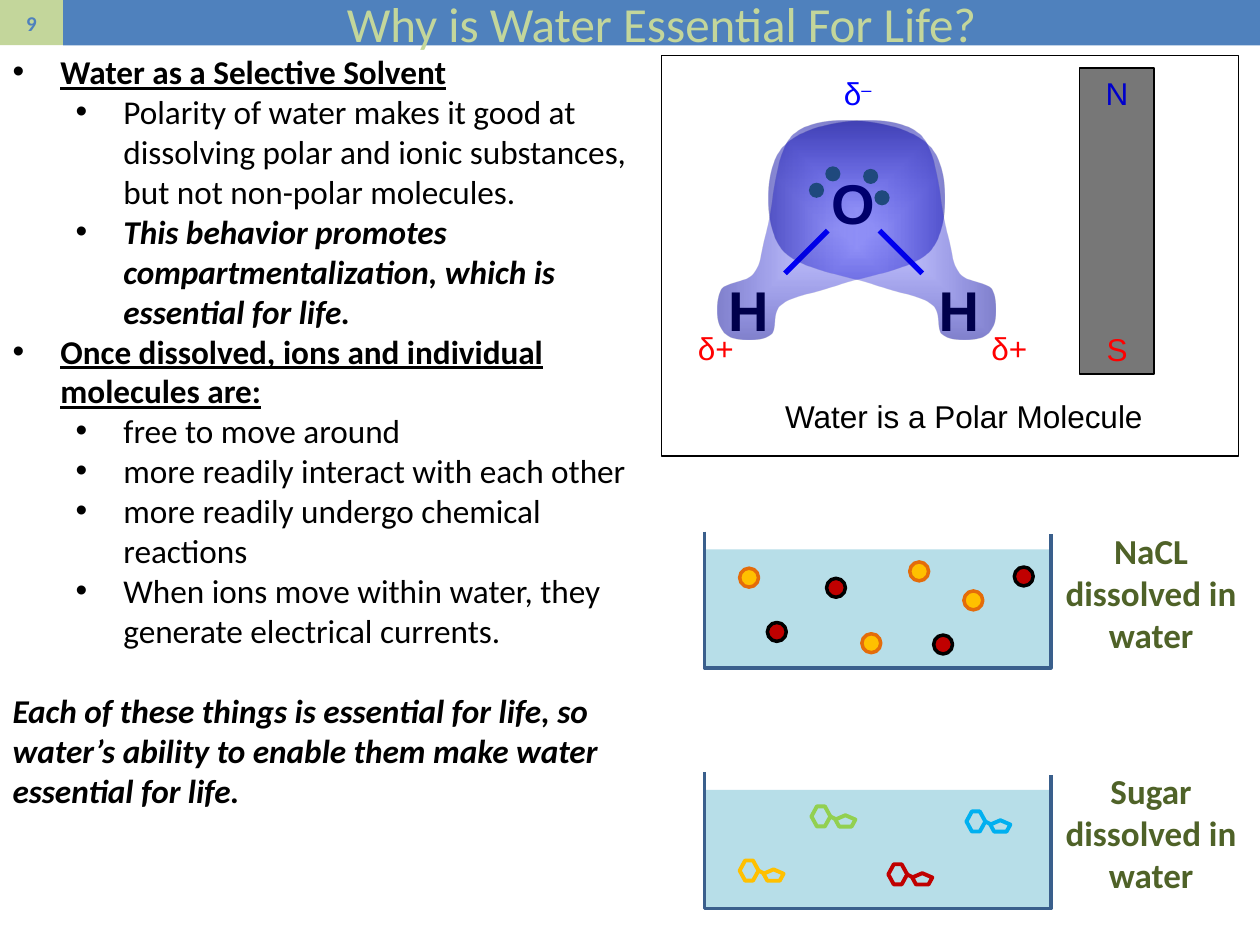
from lxml.etree import SubElement
from pptx import Presentation
from pptx.dml.color import RGBColor
from pptx.enum.shapes import MSO_CONNECTOR, MSO_SHAPE
from pptx.enum.text import MSO_ANCHOR, MSO_AUTO_SIZE, PP_ALIGN
from pptx.oxml import parse_xml
from pptx.oxml.ns import nsdecls, qn
from pptx.util import Inches, Pt

# Content
TITLE, NUMBER = "Why is Water Essential For Life?", "9"
HEAD = {"bold": True, "underline": True}
STRONG = {"bold": True, "italic": True}
BODY = [  # level (None = no bullet), text, format
    (0, "Water as a Selective Solvent", HEAD),
    (1, "Polarity of water makes it good at dissolving polar and ionic substances, "
        "but not non-polar molecules.", {}),
    (1, "This behavior promotes compartmentalization, which is essential for life.", STRONG),
    (0, "Once dissolved, ions and individual molecules are:", HEAD),
    (1, "free to move around", {}),
    (1, "more readily interact with each other", {}),
    (1, "more readily undergo chemical reactions", {}),
    (1, "When ions move within water, they generate electrical currents.", {}),
    (None, "Each of these things is essential for life, so water’s ability to enable "
           "them make water essential for life.", STRONG),
]
ATOMS = [("H", 7.24, 2.14), ("H", 5.57, 2.14), ("O", 6.4, 1.29)]
BONDS = [(6.98, 7.32), (6.57, 6.23)]
ELECTRONS = [(6.42, 1.45), (6.55, 1.32), (6.85, 1.34), (6.94, 1.51)]
CLOUD = [  # start, then two control points and an end point for each curve
    (5.84, 2.68),
    (5.91, 2.7), (6.06, 2.7), (6.12, 2.65), (6.18, 2.61), (6.12, 2.47), (6.21, 2.41),
    (6.3, 2.34), (6.45, 2.33), (6.65, 2.26), (6.85, 2.19), (7.26, 2.14), (7.39, 1.98),
    (7.53, 1.81), (7.52, 1.42), (7.44, 1.26), (7.37, 1.09), (7.14, 1.01), (6.94, 0.98),
    (6.75, 0.95), (6.43, 0.94), (6.29, 1.08), (6.15, 1.22), (6.14, 1.64), (6.09, 1.82),
    (6.04, 1.99), (6.05, 2.08), (5.99, 2.16), (5.94, 2.24), (5.78, 2.23), (5.73, 2.29),
    (5.69, 2.36), (5.69, 2.5), (5.71, 2.56), (5.73, 2.62), (5.77, 2.67), (5.84, 2.68),
]
MIRROR = 13.6  # sum of the x values of mirrored cloud points
TANKS = [("NaCL dissolved in water", 4.22), ("Sugar dissolved in water", 6.13)]
IONS = {
    ("C00000", "000000"): [(6.09, 4.94), (6.56, 4.59), (7.41, 5.04), (8.05, 4.5)],
    ("FFC000", "E46C0A"): [(7.65, 4.69), (5.87, 4.51), (6.84, 5.03), (7.22, 4.46)],
}
SUGARS = [("00B0F0", 7.67, 6.44), ("C00000", 7.05, 6.86),
          ("FFC000", 5.87, 6.83), ("92D050", 6.44, 6.4)]

prs = Presentation()
prs.slide_width, prs.slide_height = Inches(10), Inches(7.5)
s = prs.slides.add_slide(prs.slide_layouts[1])


# Helpers
def rgb(value):
    return RGBColor.from_string(value)


def place(sp, *box):
    for name, value in zip(("left", "top", "width", "height"), box):
        setattr(sp, name, Inches(value))


def paint(sp, fill=None, line=None, width=0.75):
    sp.shadow.inherit = False
    if fill:
        sp.fill.solid()
        sp.fill.fore_color.rgb = rgb(fill)
    else:
        sp.fill.background()
    if line:
        sp.line.color.rgb = rgb(line)
        sp.line.width = Pt(width)
    else:
        sp.line.fill.background()
    return sp


def shape(kind, box, **look):
    return paint(s.shapes.add_shape(kind, *map(Inches, box)), **look)


def write(p, text, size, color, font="Calibri", **extra):
    r = p.add_run()
    r.text = text
    r.font.color.rgb = rgb(color)
    for name, value in {"size": Pt(size), "name": font, **extra}.items():
        setattr(r.font, name, value)
    return r


def label(text, box, size, color, wrap=True, **extra):
    tf = s.shapes.add_textbox(*map(Inches, box)).text_frame
    tf.word_wrap = wrap
    p = tf.paragraphs[0]
    p.alignment = PP_ALIGN.CENTER if wrap else PP_ALIGN.LEFT
    write(p, text, size, color, **extra)
    return p


def line(x1, y1, x2, y2, color, width):
    c = s.shapes.add_connector(MSO_CONNECTOR.STRAIGHT, *map(Inches, (x1, y1, x2, y2)))
    c.line.color.rgb = rgb(color)
    c.line.width = Pt(width)
    SubElement(c._element.spPr, qn("a:effectLst"))


def outline(points, close):
    start, *rest = [(Inches(x), Inches(y)) for x, y in points]
    builder = s.shapes.build_freeform(*start)
    builder.add_line_segments(rest, close=close)
    return builder.convert_to_shape()


def curve(sp):
    """Turn each three line segments into one cubic curve."""
    segments = list(sp._element.spPr.iter(qn("a:lnTo")))
    for first, second, third in zip(*[iter(segments)] * 3):
        first.tag = qn("a:cubicBezTo")
        for segment in (second, third):
            first.append(segment[0])
            segment.getparent().remove(segment)


def cloud(points):
    sp = paint(outline(points, True))
    curve(sp)
    stops = "".join(
        f'<a:gs pos="{pos}"><a:srgbClr val="{color}"><a:alpha val="{alpha}"/></a:srgbClr></a:gs>'
        for pos, color, alpha in ((0, "0000FF", 20000), (100000, "000099", 50000)))
    spPr = sp._element.spPr
    spPr.replace(spPr.find(qn("a:noFill")), parse_xml(
        f'<a:gradFill {nsdecls("a")} rotWithShape="1"><a:gsLst>{stops}</a:gsLst><a:path path="rect">'
        '<a:fillToRect l="50000" t="50000" r="50000" b="50000"/></a:path></a:gradFill>'))


# Header: number box and title
sp = shape(MSO_SHAPE.RECTANGLE, (0, 0, 0.5, 0.36), fill="C3D69B")
title = paint(s.shapes.title, fill="4F81BD")
place(title, 0.5, 0, 9.5, 0.36)
for box, text, size, color, bold in ((sp, NUMBER, 12, "4F81BD", True),
                                     (title, TITLE, 28, "C3D69B", False)):
    tf = box.text_frame
    tf.auto_size, tf.vertical_anchor = MSO_AUTO_SIZE.NONE, MSO_ANCHOR.MIDDLE
    tf.paragraphs[0].alignment = PP_ALIGN.CENTER
    write(tf.paragraphs[0], text, size, color, bold=bold)

# Body list
body = s.placeholders[1]
place(body, 0, 0.36, 5.08, 6.18)
tf = body.text_frame
tf.auto_size = MSO_AUTO_SIZE.NONE
for i, (level, text, look) in enumerate(BODY):
    p = tf.add_paragraph() if i else tf.paragraphs[0]
    p.level = level or 0
    p.space_before = Pt(23 if level is None else 0)
    pPr = p._p.get_or_add_pPr()
    bulleted = level is not None
    pPr.set("marL", str(Inches(0.38 + 0.5 * level) if bulleted else 0))
    pPr.set("indent", str(Inches(-0.38) if bulleted else 0))
    if bulleted:
        SubElement(pPr, qn("a:buFont"), typeface="Arial")
        SubElement(pPr, qn("a:buChar"), char="•")
    else:
        SubElement(pPr, qn("a:buNone"))
    write(p, text, 19, "000000", **look)

# Polar molecule panel
shape(MSO_SHAPE.RECTANGLE, (5.25, 0.44, 4.58, 3.18), line="000000")
for text, x, y in ATOMS:
    label(text, (x, y, 0.74, 0.63), 32, "000000", font="Arial", bold=True)
for x1, x2 in BONDS:
    line(x1, 1.83, x2, 2.17, "0000FF", 3)
cloud(CLOUD)
for x in (5.44, 7.77):
    label("δ+", (x, 2.56, 0.49, 0.4), 18, "FF0000", wrap=False, font="Arial")
p = label("δ", (6.6, 0.54, 0.43, 0.4), 18, "0000FF", wrap=False, font="Arial")
r = write(p, "–", 18, "0000FF", font="Arial")
r.font._element.set("baseline", "30000")
cloud([(MIRROR - x, y) for x, y in CLOUD])
for x, y in ELECTRONS:
    shape(MSO_SHAPE.OVAL, (x, y, 0.12, 0.12), fill="1F497D")
label("Water is a Polar Molecule", (5.93, 3.1, 3.44, 0.4), 18, "000000", font="Arial")

# Magnet
shape(MSO_SHAPE.RECTANGLE, (8.57, 0.54, 0.59, 2.43), fill="777777", line="000000")
for text, y, color in (("N", 0.54, "0000CC"), ("S", 2.57, "FF0000")):
    label(text, (8.57, y, 0.59, 0.4), 18, color, font="Arial")

# Tanks
for text, y in TANKS:
    shape(MSO_SHAPE.RECTANGLE, (5.59, y + 0.14, 2.75, 0.94), fill="B7DEE8")
    walls = [(5.59, y), (5.59, y + 1.08), (8.34, y + 1.08), (8.34, y + 0.02)]
    paint(outline(walls, False), line="3A5F8C", width=2)
    label(text, (8.29, y - 0.07, 1.69, 1.11), 20, "4F6228", bold=True)

# Dissolved ions
for (fill, edge), spots in IONS.items():
    for x, y in spots:
        shape(MSO_SHAPE.OVAL, (x, y, 0.15, 0.15), fill=fill, line=edge, width=2)

# Sugar molecules: two rings and a bond
for color, x, y in SUGARS:
    ring = shape(MSO_SHAPE.HEXAGON, (x, y, 0.15, 0.16), line=color, width=2.25)
    ring.adjustments[0] = 0.29
    shape(MSO_SHAPE.REGULAR_PENTAGON, (x + 0.19, y + 0.07, 0.16, 0.09), line=color, width=2.25)
    line(x + 0.15, y + 0.08, x + 0.19, y + 0.1, color, 2.25)

prs.save("out.pptx")
